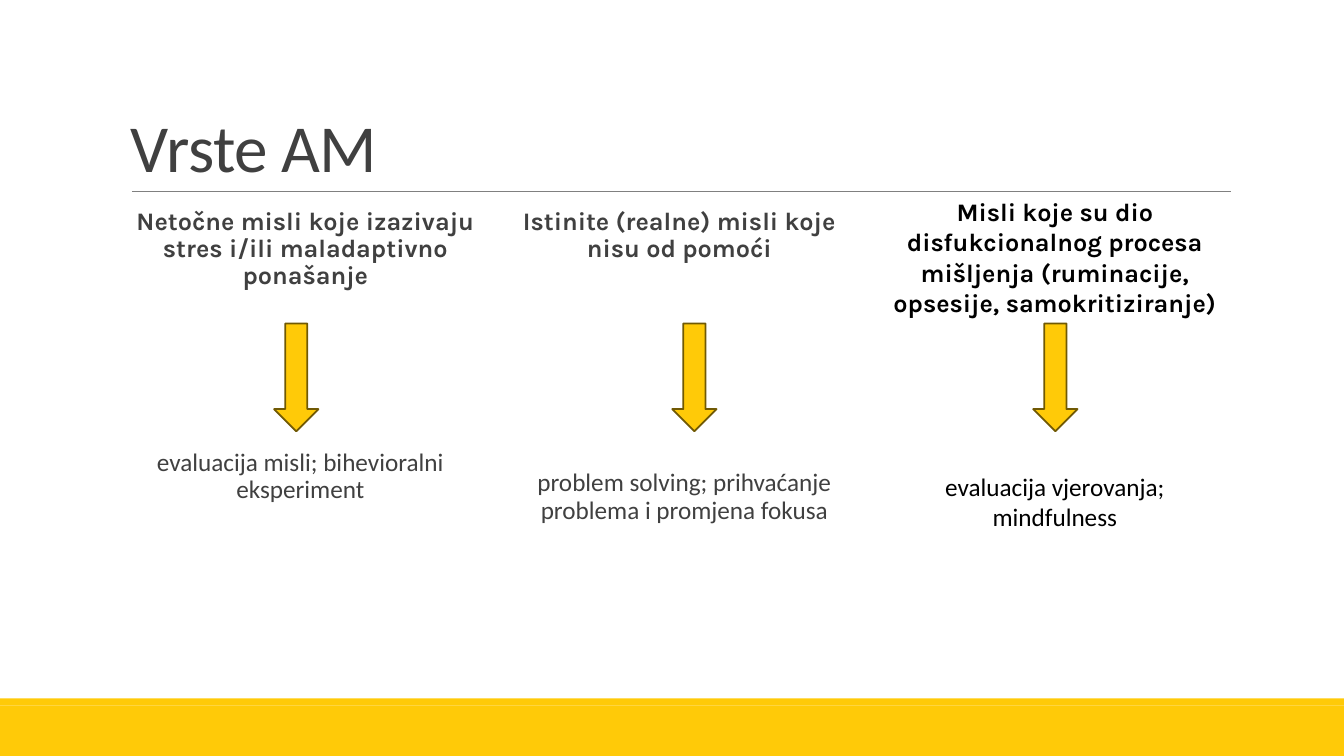
import pptx
import pptx.util
import pptx.dml.color
import pptx.enum.shapes
import pptx.enum.text

Pt = pptx.util.Pt
SHAPE = pptx.enum.shapes.MSO_SHAPE
ALIGN = pptx.enum.text.PP_ALIGN
ANCHOR = pptx.enum.text.MSO_ANCHOR

COLORS = {"gold": "FFCA08", "outline": "705904", "rule": "808080",
          "gray": "404040", "black": "000000"}
WIDTH, HEIGHT = 960, 540
TITLE = "Vrste AM"
BODY = {"top": 145.4, "width": 256.3, "inset": 0, "color": "gray", "spacing": 0.9}
SIDE = {"top": 136.8, "width": 249.8, "inset": 7.2, "color": "black", "spacing": 1.0}
COLUMNS = [
    {"thought": "Netočne misli koje izazivaju stres i/ili maladaptivno ponašanje",
     "response": "evaluacija misli; bihevioralni eksperiment",
     "left": 86.4, "arrow": 195.8, "gap": 114, "margins": (7.2, 0), "style": BODY},
    {"thought": "Istinite (realne) misli koje nisu od pomoći",
     "response": "problem solving; prihvaćanje problema i promjena fokusa",
     "left": 357.1, "arrow": 480.2, "gap": 148, "margins": (0, 7.2), "style": BODY},
    {"thought": "Misli koje su dio disfukcionalnog procesa mišljenja "
                "(ruminacije, opsesije, samokritiziranje)",
     "response": "evaluacija vjerovanja; mindfulness",
     "left": 628.6, "arrow": 738, "gap": 110, "margins": (0, 0), "style": SIDE},
]
COLUMN_HEIGHT = 269.3
ARROW_TOP, ARROW_WIDTH, ARROW_HEIGHT = 231.1, 31.7, 77
BANDS = [(504, 36), (498.96, 5.04)]


def rgb(name):
    return pptx.dml.color.RGBColor.from_string(COLORS[name])


def add_box(left, top, width, height, inset=7.2, anchor=ANCHOR.TOP):
    frame = page.shapes.add_textbox(Pt(left), Pt(top), Pt(width), Pt(height)).text_frame
    frame.word_wrap = True
    frame.vertical_anchor = anchor
    frame.margin_left = frame.margin_right = Pt(inset)
    frame.margin_top = frame.margin_bottom = Pt(3.6)
    return frame


def write(text, para, font="Calibri", size=18, color="gray", bold=False,
          align=ALIGN.CENTER, spacing=1.0, before=0, margin=0, tracking=0):
    para.alignment = align
    para.line_spacing = spacing
    para.space_before = Pt(before)
    if margin:
        para._p.get_or_add_pPr().set("marL", str(int(Pt(margin))))
    span = para.add_run()
    span.text = text
    span.font.name = font
    span.font.size = Pt(size)
    span.font.bold = bold
    span.font.color.rgb = rgb(color)
    if tracking:
        span.font._element.set("spc", str(int(tracking * 100)))


def add_block(kind, left, top, width, height, line=None):
    shape = page.shapes.add_shape(kind, Pt(left), Pt(top), Pt(width), Pt(height))
    shape.shadow.inherit = False
    shape.fill.solid()
    shape.fill.fore_color.rgb = rgb("gold")
    if line:
        shape.line.color.rgb = rgb(line)
        shape.line.width = Pt(1.25)
    else:
        shape.line.fill.background()


deck = pptx.Presentation()
deck.slide_width, deck.slide_height = Pt(WIDTH), Pt(HEIGHT)
page = deck.slides.add_slide(deck.slide_layouts[6])

for top, height in BANDS:
    add_block(SHAPE.RECTANGLE, 0, top, WIDTH, height)

rule = page.shapes.add_connector(pptx.enum.shapes.MSO_CONNECTOR.STRAIGHT,
                                 Pt(94.3), Pt(136.8), Pt(879.1), Pt(136.8))
rule.line.color.rgb = rgb("rule")
rule.line.width = Pt(0.5)
rule._element.spPr.append(pptx.oxml.parse_xml(
    '<a:effectLst xmlns:a="http://schemas.openxmlformats.org/drawingml/2006/main"/>'))

title = add_box(86.4, 77.8, 792, 59, anchor=ANCHOR.BOTTOM)
write(TITLE, title.paragraphs[0], size=48, align=ALIGN.LEFT, spacing=0.85, tracking=-0.5)

for column in COLUMNS:
    style = column["style"]
    frame = add_box(column["left"], style["top"], style["width"], COLUMN_HEIGHT, style["inset"])
    look = {"color": style["color"], "spacing": style["spacing"]}
    thought_margin, response_margin = column["margins"]
    write(column["thought"], frame.paragraphs[0], font="Karla", bold=True,
          margin=thought_margin, **look)
    write(column["response"], frame.add_paragraph(), before=column["gap"],
          margin=response_margin, **look)

for column in COLUMNS:
    add_block(SHAPE.DOWN_ARROW, column["arrow"], ARROW_TOP, ARROW_WIDTH, ARROW_HEIGHT,
              line="outline")

deck.save("out.pptx")
